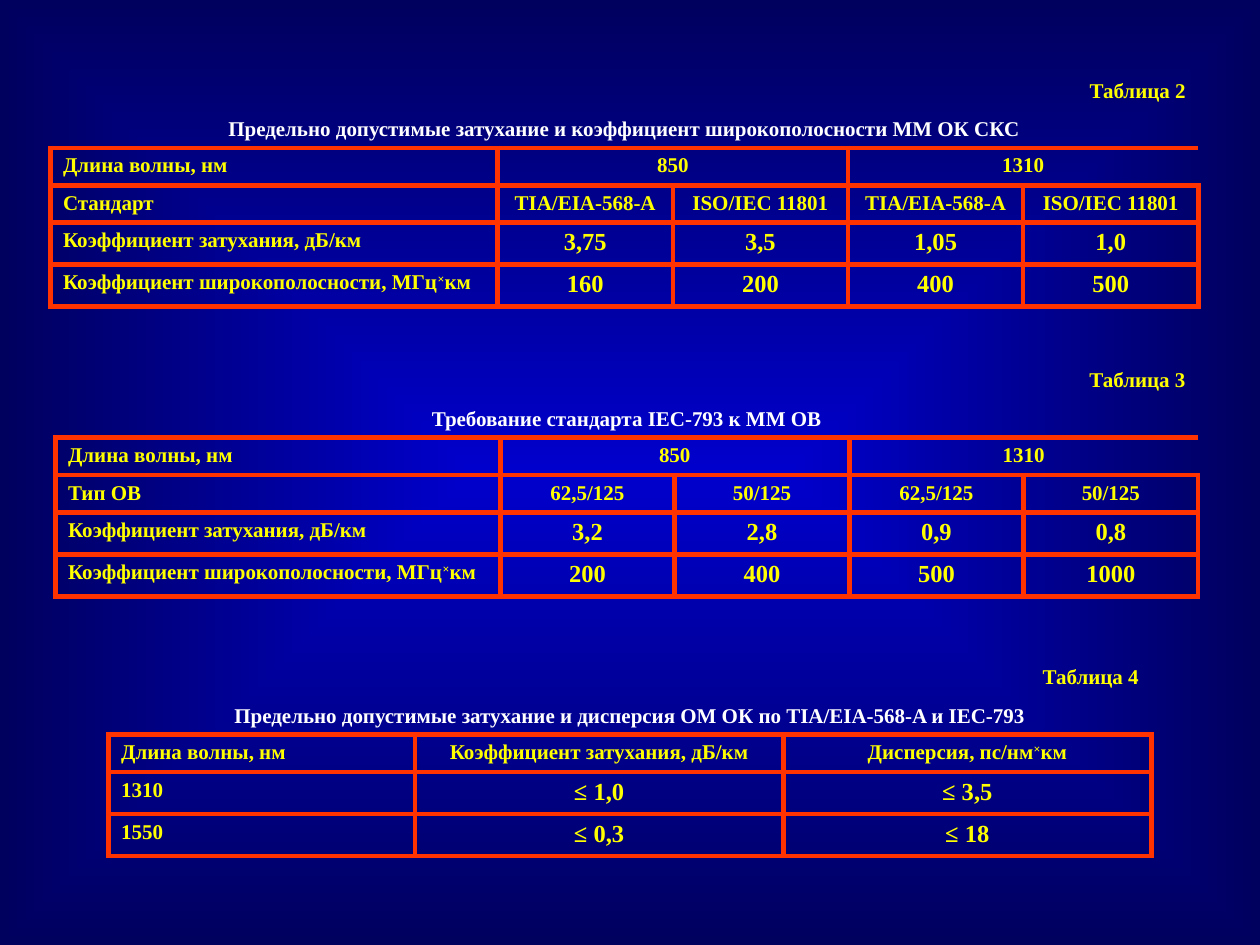
from dataclasses import dataclass
from typing import Optional

from lxml import etree
from pptx import Presentation
from pptx import util as u
from pptx.dml.color import RGBColor
from pptx.enum import text
from pptx.oxml import ns

FONT = "Times New Roman"
YELLOW, WHITE, ORANGE = "FFFF00", "FFFFFF", "FF3300"
GRADIENT = ("0000CC", "00005E")
NO_STYLE = "{2D5ABB26-0587-4C30-8999-92F81FD0307C}"
BORDER_WIDTH = u.Pt(3)
LABEL_ROW, VALUE_ROW = 21.4, 24
HEADING_ROWS = 2
ALIGN = text.PP_ALIGN


@dataclass
class DataTable:
    left: float
    top: float
    columns: list[float]
    number: str
    title: str
    header: list[list[Optional[str]]]  # None continues the cell on its left
    values: list[list[str]]


WAVELENGTHS = ["Длина волны, нм", "850", None, "1310", None]
ATTENUATION = "Коэффициент затухания, дБ/км"
BANDWIDTH = "Коэффициент широкополосности, МГц×км"

TABLES = [
    DataTable(
        28.8, 41.8, [255.6] + [100.1] * 4, "Таблица 2",
        "Предельно допустимые затухание и коэффициент широкополосности ММ ОК СКС",
        [WAVELENGTHS, ["Стандарт"] + ["TIA/EIA-568-A", "ISO/IEC 11801"] * 2],
        [[ATTENUATION, "3,75", "3,5", "1,05", "1,0"],
         [BANDWIDTH, "160", "200", "400", "500"]],
    ),
    DataTable(
        31.7, 207.4, [254.2] + [99.7] * 4, "Таблица 3",
        "Требование стандарта IEC-793 к ММ ОВ",
        [WAVELENGTHS, ["Тип ОВ"] + ["62,5/125", "50/125"] * 2],
        [[ATTENUATION, "3,2", "2,8", "0,9", "0,8"],
         [BANDWIDTH, "200", "400", "500", "1000"]],
    ),
    DataTable(
        62, 377.1, [175.2, 210.4, 210.4], "Таблица 4",
        "Предельно допустимые затухание и дисперсия ОМ ОК по TIA/EIA-568-A и IEC-793",
        [["Длина волны, нм", ATTENUATION, "Дисперсия, пс/нм×км"]],
        [["1310", "≤ 1,0", "≤ 3,5"], ["1550", "≤ 0,3", "≤ 18"]],
    ),
]


def color(value: str) -> RGBColor:
    return RGBColor.from_string(value)


def write(cell, words: str, *, align=ALIGN.CENTER, size: float = 12, fill: str = YELLOW) -> None:
    """Put bold text in the cell, raising any multiplication sign."""
    paragraph = cell.text_frame.paragraphs[0]
    paragraph.alignment = align
    for part in filter(None, words.partition("×")):
        run = paragraph.add_run()
        run.text = part
        font = run.font
        font.name, font.size, font.bold = FONT, u.Pt(size), True
        font.color.rgb = color(fill)
        if part == "×":
            run._r.get_or_add_rPr().set("baseline", "30000")


def add_borders(cell, sides: str) -> None:
    """Draw the sides named by letters out of LRTB and clear the others."""
    properties = cell._tc.get_or_add_tcPr()
    for side in "LRTB":
        line = etree.SubElement(properties, ns.qn(f"a:ln{side}"))
        if side in sides:
            line.set("w", str(BORDER_WIDTH))
            solid = etree.SubElement(line, ns.qn("a:solidFill"))
            etree.SubElement(solid, ns.qn("a:srgbClr")).set("val", ORANGE)
        else:
            etree.SubElement(line, ns.qn("a:noFill"))


def add_heading(table, row: int, words: str, sides: str, **text_format) -> None:
    last = len(table.columns) - 1
    for column in range(last + 1):
        add_borders(table.cell(row, column), sides)
    table.cell(row, 0).merge(table.cell(row, last))
    write(table.cell(row, 0), words, **text_format)


def add_body_row(table, row: int, words: list[Optional[str]], size: float) -> None:
    for column, content in enumerate(words):
        cell = table.cell(row, column)
        opens_span = column + 1 < len(words) and words[column + 1] is None
        if content is None:
            table.cell(row, column - 1).merge(cell)
            add_borders(cell, "RTB")
            continue
        add_borders(cell, "LTB" if opens_span else "LRTB")
        if column == 0:
            write(cell, content, align=ALIGN.JUSTIFY)
        else:
            write(cell, content, size=size)


def add_data_table(slide, data: DataTable) -> None:
    heights = [LABEL_ROW] * (HEADING_ROWS + len(data.header)) + [VALUE_ROW] * len(data.values)
    frame = slide.shapes.add_table(
        len(heights), len(data.columns), u.Pt(data.left), u.Pt(data.top),
        u.Pt(sum(data.columns)), u.Pt(sum(heights)))
    table = frame.table
    table.first_row = table.horz_banding = False
    next(frame.element.iter(ns.qn("a:tableStyleId"))).text = NO_STYLE
    for column, width in zip(table.columns, data.columns):
        column.width = u.Pt(width)
    for row, height in zip(table.rows, heights):
        row.height = u.Pt(height)

    add_heading(table, 0, data.number, "", align=ALIGN.RIGHT)
    add_heading(table, 1, data.title, "B", fill=WHITE)
    table.cell(1, 0).vertical_anchor = text.MSO_ANCHOR.MIDDLE
    body = [(words, 12) for words in data.header] + [(words, 14) for words in data.values]
    for row, (words, size) in enumerate(body, HEADING_ROWS):
        add_body_row(table, row, words, size)
    for cell in table.iter_cells():
        cell.fill.background()


def paint_background(slide) -> None:
    """Fill with a gradient that spreads from the centre to the edges."""
    fill = slide.background.fill
    fill.gradient()
    for stop, value, position in zip(fill.gradient_stops, GRADIENT, (0, 1)):
        stop.color.rgb = color(value)
        stop.position = position
    gradient = next(slide.element.iter(ns.qn("a:gradFill")))
    gradient.remove(gradient.find(ns.qn("a:lin")))
    spread = etree.SubElement(gradient, ns.qn("a:path"))
    spread.set("path", "shape")
    center = etree.SubElement(spread, ns.qn("a:fillToRect"))
    for side in "ltrb":
        center.set(side, "50000")


def main() -> None:
    presentation = Presentation()
    presentation.slide_width, presentation.slide_height = u.Pt(720), u.Pt(540)
    slide = presentation.slides.add_slide(presentation.slide_layouts[6])
    paint_background(slide)
    for data in TABLES:
        add_data_table(slide, data)
    presentation.save("out.pptx")


if __name__ == "__main__":
    main()
